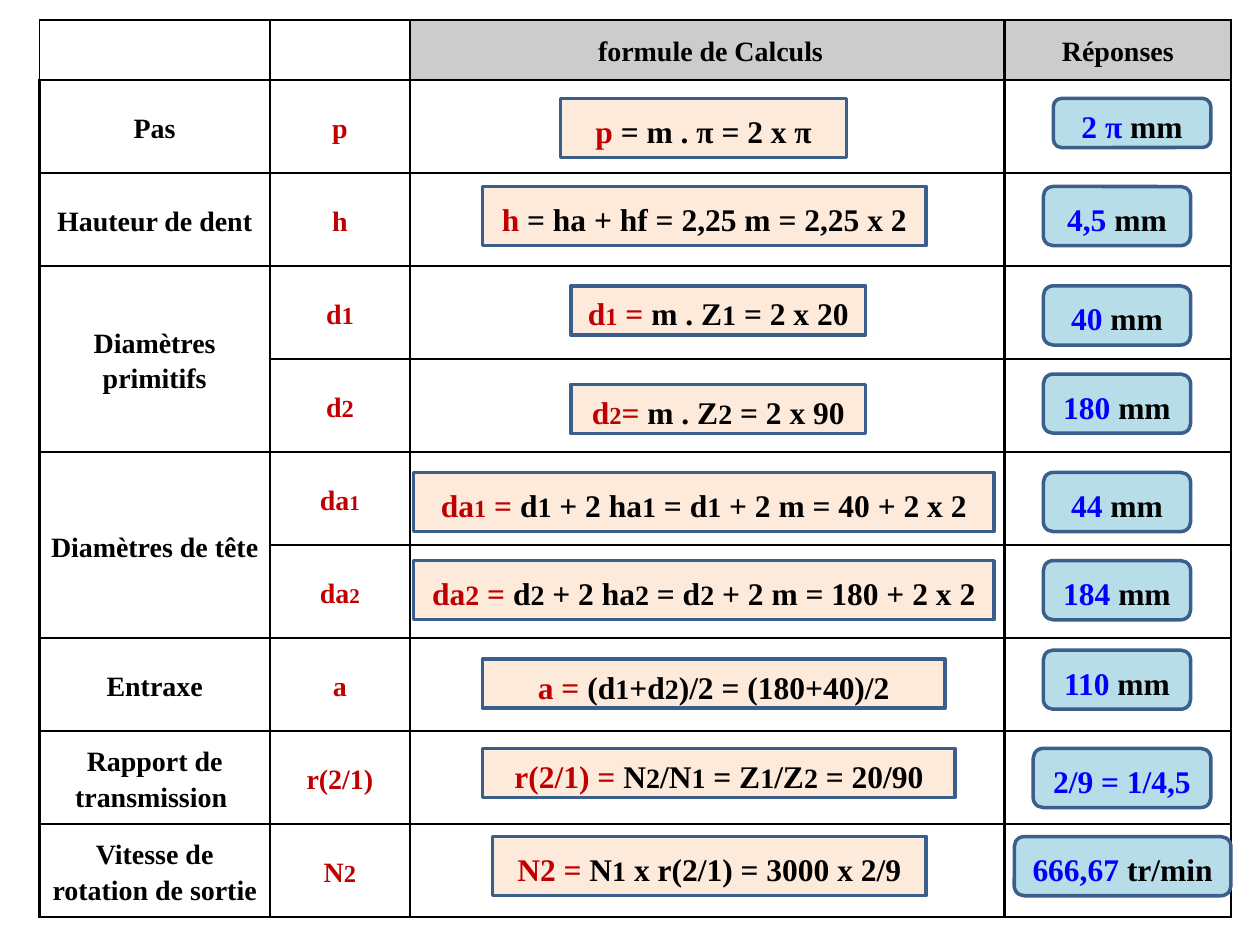
"""Build the gear calculation slide: a table of quantities with formula and answer boxes."""
from dataclasses import dataclass
from typing import Any

from lxml import etree
from pptx import Presentation
from pptx import util as u
from pptx.dml import color
from pptx.enum import shapes, text
from pptx.oxml import ns


@dataclass(frozen=True)
class Theme:
    font: str = "Times New Roman"
    ink: str = "000000"
    symbol: str = "C00000"
    value: str = "0000FF"
    header: str = "CCCCCC"
    formula: str = "FDEADA"
    answer: str = "B7DEE8"
    outline: str = "3A5F8C"
    box_size: int = 18
    cell_size: int = 16
    index_size: int = 16
    small_index: int = 14
    tiny_index: int = 12
    spacing: float = 1.15
    thin: float = 1
    rule: float = 1.5
    outline_width: float = 2


@dataclass
class Sheet:
    theme: Theme
    slide: Any

    def add_runs(self, frame, groups):
        frame.vertical_anchor = text.MSO_ANCHOR.MIDDLE
        frame.word_wrap = True
        line = frame.paragraphs[0]
        line.alignment = text.PP_ALIGN.CENTER
        line.line_spacing = self.theme.spacing
        for pieces, tint, sizes in groups:
            for position, piece in enumerate(pieces):
                run = line.add_run()
                run.text = piece
                run.font.name = self.theme.font
                run.font.bold = True
                run.font.size = u.Pt(sizes[position % 2])
                run.font.color.rgb = color.RGBColor.from_string(tint)

    def box(self, kind, fill, bounds, groups):
        frame = self.slide.shapes.add_shape(kind, *map(u.Pt, bounds))
        frame.shadow.inherit = False
        frame.fill.solid()
        frame.fill.fore_color.rgb = color.RGBColor.from_string(fill)
        frame.line.color.rgb = color.RGBColor.from_string(self.theme.outline)
        frame.line.width = u.Pt(self.theme.outline_width)
        self.add_runs(frame.text_frame, groups)

    def formula(self, bounds, lead, body, lead_index):
        look = self.theme
        self.box(shapes.MSO_SHAPE.RECTANGLE, look.formula, bounds,
                 [(lead, look.symbol, (look.box_size, lead_index)),
                  (body, look.ink, (look.box_size, look.index_size))])

    def answer(self, bounds, value, unit):
        look = self.theme
        sizes = (look.box_size, look.box_size)
        groups = [([value], look.value, sizes)]
        if unit:
            groups.append(([unit], look.ink, sizes))
        self.box(shapes.MSO_SHAPE.ROUNDED_RECTANGLE, look.answer, bounds, groups)

    def borders(self, cell, row, column):
        properties = cell._tc.get_or_add_tcPr()
        for side in "LRTB":
            thin = ((column, side) in [(0, "R"), (1, "L")]
                    or row == 0 and column < 2 and side in "LT")
            width = self.theme.thin if thin else self.theme.rule
            edge = etree.SubElement(properties, ns.qn(f"a:ln{side}"), w=str(u.Pt(width)))
            paint = etree.SubElement(edge, ns.qn("a:solidFill"))
            etree.SubElement(paint, ns.qn("a:srgbClr"), val=self.theme.ink)

    def table(self, left, top, widths, heights):
        grid = self.slide.shapes.add_table(
            len(heights), len(widths), u.Pt(left), u.Pt(top),
            u.Pt(sum(widths)), u.Pt(sum(heights))).table
        grid.first_row = grid.horz_banding = False
        for column, width in zip(grid.columns, widths):
            column.width = u.Pt(width)
        for row, height in zip(grid.rows, heights):
            row.height = u.Pt(height)
        for r in range(len(heights)):
            for c in range(len(widths)):
                cell = grid.cell(r, c)
                cell.margin_left = cell.margin_right = u.Pt(3.6)
                cell.margin_top = cell.margin_bottom = 0
                self.borders(cell, r, c)
                cell.fill.background()
        return grid

    def label(self, cell, pieces, tint, index_size=None):
        cell.vertical_anchor = text.MSO_ANCHOR.MIDDLE
        self.add_runs(cell.text_frame, [(pieces, tint, (self.theme.cell_size, index_size))])

    def heading(self, cell, caption):
        cell.fill.solid()
        cell.fill.fore_color.rgb = color.RGBColor.from_string(self.theme.header)
        self.label(cell, [caption], self.theme.ink)


LOOK = Theme()
SMALL, TINY, INDEX = LOOK.small_index, LOOK.tiny_index, LOOK.index_size
LOW, TALL = 28.1, 33.8

QUANTITIES = [
    ("Pas", [["p"]], SMALL),
    ("Hauteur de dent", [["h"]], SMALL),
    ("Diamètres primitifs", [["d", "1"], ["d", "2"]], SMALL),
    ("Diamètres de tête", [["da", "1"], ["da", "2"]], TINY),
    ("Entraxe", [["a"]], SMALL),
    ("Rapport de transmission ", [["r(2/1)"]], SMALL),
    ("Vitesse de rotation de sortie", [["N", "2"]], SMALL),
]

FORMULAS = [
    ((320.4, 56.2, 163.4, TALL), ["p "], ["= m . π = 2 x π"], SMALL),
    ((275.8, 106.6, 253.4, TALL), ["h "], ["= ha + hf = 2,25 m = 2,25 x 2"], SMALL),
    ((326.2, 163.4, 168.5, LOW), ["d", "1", " = "], ["m . Z", "1", " = 2 x 20"], SMALL),
    ((326.2, 219.6, 168.5, LOW), ["d", "2", "= "], ["m . Z", "2", " = 2 x 90"], SMALL),
    ((236.2, 270, 331.9, TALL), ["da", "1", " = "],
     ["d", "1", " + 2 ha", "1", " = d", "1", " + 2 m = 40 + 2 x 2"], SMALL),
    ((236.2, 320.4, 331.9, TALL), ["da", "2", " = "],
     ["d", "2", " + 2 ha", "2", " = d", "2", " + 2 m = 180 + 2 x 2"], INDEX),
    ((275.8, 376.6, 264.2, LOW), ["a = "], ["(d", "1", "+d", "2", ")/2 = (180+40)/2"], SMALL),
    ((275.8, 427.7, 270, LOW), ["r(2/1) = "],
     ["N", "2", "/N", "1", " = Z", "1", "/Z", "2", " = 20/90"], SMALL),
    ((281.5, 478.1, 247.7, TALL), ["N2 = "], ["N", "1", " x r(2/1) = 3000 x 2/9"], SMALL),
]

ANSWERS = [
    ((601.9, 56.2, 90, LOW), "2 π ", "mm"),
    *[((596.2, top, 84.2, TALL), value, "mm") for top, value in [
        (106.6, "4,5 "), (163.4, "40 "), (213.8, "180 "),
        (270, "44 "), (320.4, "184 "), (371.5, "110 ")]],
    ((590.4, 427.7, 101.5, TALL), "2/9 = 1/4,5", ""),
    ((579.6, 478.1, 123.8, TALL), "666,67 ", "tr/min"),
]


def main():
    deck = Presentation()
    deck.slide_width, deck.slide_height = u.Pt(720), u.Pt(540)
    sheet = Sheet(LOOK, deck.slides.add_slide(deck.slide_layouts[6]))

    grid = sheet.table(22.5, 11.5, [131.8, 79.9, 339.8, 129.6], [34.3] + [53.15] * 9)
    sheet.heading(grid.cell(0, 2), " formule de Calculs")
    sheet.heading(grid.cell(0, 3), "Réponses")
    row = 1
    for name, symbols, index_size in QUANTITIES:
        if len(symbols) > 1:
            grid.cell(row, 0).merge(grid.cell(row + len(symbols) - 1, 0))
        sheet.label(grid.cell(row, 0), [name], LOOK.ink)
        for symbol in symbols:
            sheet.label(grid.cell(row, 1), symbol, LOOK.symbol, index_size)
            row += 1

    for formula in FORMULAS:
        sheet.formula(*formula)
    for answer in ANSWERS:
        sheet.answer(*answer)
    deck.save("out.pptx")


if __name__ == "__main__":
    main()
